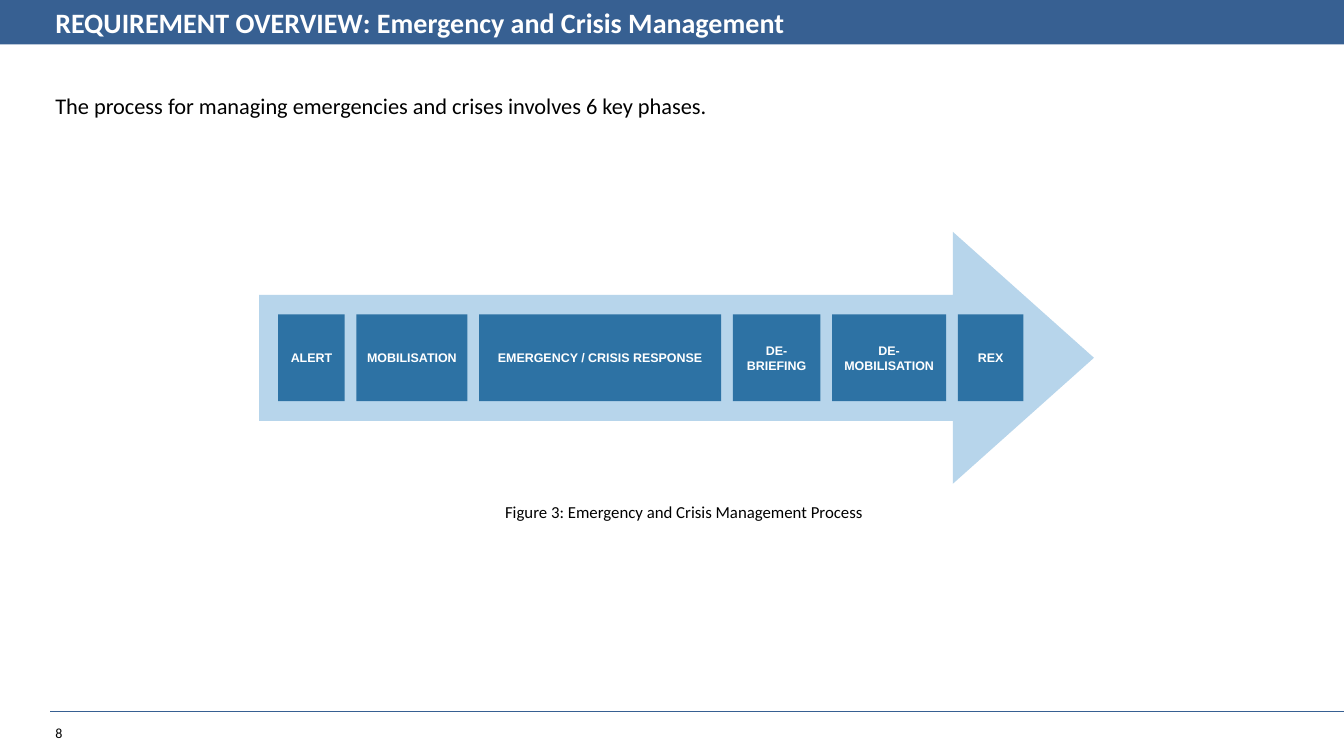
from lxml import etree
from pptx import Presentation
from pptx.dml.color import RGBColor
from pptx.enum.shapes import MSO_CONNECTOR, MSO_SHAPE
from pptx.enum.text import MSO_ANCHOR, PP_ALIGN
from pptx.oxml.ns import qn
from pptx.util import Inches, Pt

RECT, ARROW = MSO_SHAPE.RECTANGLE, MSO_SHAPE.RIGHT_ARROW
STRAIGHT = MSO_CONNECTOR.STRAIGHT
TOP, MIDDLE = MSO_ANCHOR.TOP, MSO_ANCHOR.MIDDLE
LEFT, CENTER, JUSTIFY = PP_ALIGN.LEFT, PP_ALIGN.CENTER, PP_ALIGN.JUSTIFY

NAVY = RGBColor(0x37, 0x60, 0x92)
BLUE = RGBColor(0x2D, 0x72, 0xA4)
PALE_BLUE = RGBColor(0xB7, 0xD5, 0xEB)
WHITE = RGBColor(0xFF, 0xFF, 0xFF)
BLACK = RGBColor(0, 0, 0)

TITLE = "REQUIREMENT OVERVIEW: Emergency and Crisis Management"
INTRO = "The process for managing emergencies and crises involves 6 key phases."
CAPTION = "Figure 3: Emergency and Crisis Management Process"
PAGE_NUMBER = "8"
PHASES = [  # label, width in inches
    ("ALERT", 0.66),
    ("MOBILISATION", 1.1),
    ("EMERGENCY / CRISIS RESPONSE", 2.4),
    ("DE-BRIEFING", 0.87),
    ("DE-MOBILISATION", 1.13),
    ("REX", 0.65),
]

SLIDE_WIDTH, SLIDE_HEIGHT = 13.33, 7.5
HEADER_HEIGHT = 0.44
MARGIN = 0.45
ARROW_BOX = (2.57, 2.3, 8.28, 2.5)
PHASES_LEFT, PHASES_RIGHT = 2.76, 10.15
PHASE_HEIGHT = 0.86


def write(shape, text, size, color, font="Calibri", bold=False,
          align=LEFT, anchor=TOP):
    frame = shape.text_frame
    frame.word_wrap = True
    frame.vertical_anchor = anchor
    paragraph = frame.paragraphs[0]
    paragraph.alignment = align
    run = paragraph.add_run()
    run.text = text
    run.font.name = font
    run.font.size = Pt(size)
    run.font.bold = bold
    run.font.color.rgb = color


def add_filled(slide, kind, box, color):
    shape = slide.shapes.add_shape(kind, *map(Inches, box))
    shape.shadow.inherit = False
    shape.fill.solid()
    shape.fill.fore_color.rgb = color
    shape.line.fill.background()
    return shape


def add_text(slide, box, *args, **style):
    write(slide.shapes.add_textbox(*map(Inches, box)), *args, **style)


def add_frame(slide):
    """Header bar with title, footer rule and page number."""
    rule = slide.shapes.add_connector(
        STRAIGHT, Inches(0.5), Inches(7.06), Inches(SLIDE_WIDTH), Inches(7.06))
    rule.line.color.rgb = NAVY
    rule.line.width = Pt(0.75)
    etree.SubElement(rule._element.spPr, qn("a:effectLst"))
    add_text(slide, (MARGIN, 7.14, 0.71, 0.27), PAGE_NUMBER, 10, BLACK)
    add_filled(slide, RECT, (0, 0, SLIDE_WIDTH, HEADER_HEIGHT), NAVY)
    add_text(slide, (MARGIN, 0, 10.47, HEADER_HEIGHT), TITLE, 20, WHITE,
             bold=True, anchor=MIDDLE)


def add_process(slide):
    arrow_left, arrow_top, arrow_width, arrow_height = ARROW_BOX
    arrow = add_filled(slide, ARROW, ARROW_BOX, PALE_BLUE)
    arrow.adjustments[0] = 0.5
    arrow.adjustments[1] = 0.56

    total_width = sum(width for _, width in PHASES)
    gap = (PHASES_RIGHT - PHASES_LEFT - total_width) / (len(PHASES) - 1)
    top = arrow_top + (arrow_height - PHASE_HEIGHT) / 2
    left = PHASES_LEFT
    for label, width in PHASES:
        phase = add_filled(slide, RECT, (left, top, width, PHASE_HEIGHT), BLUE)
        phase.text_frame.margin_left = phase.text_frame.margin_right = Inches(0.07)
        write(phase, label, 8.9, WHITE, font="Arial", bold=True,
              align=CENTER, anchor=MIDDLE)
        left += width + gap


def main():
    deck = Presentation()
    deck.slide_width = Inches(SLIDE_WIDTH)
    deck.slide_height = Inches(SLIDE_HEIGHT)
    slide = deck.slides.add_slide(deck.slide_layouts[6])
    add_frame(slide)
    add_text(slide, (MARGIN, 0.86, 12.39, 0.45), INTRO, 16, BLACK, align=JUSTIFY)
    add_text(slide, (3.45, 4.93, 6.67, 0.3), CAPTION, 12, BLACK, align=CENTER)
    add_process(slide)
    deck.save("out.pptx")


if __name__ == "__main__":
    main()
